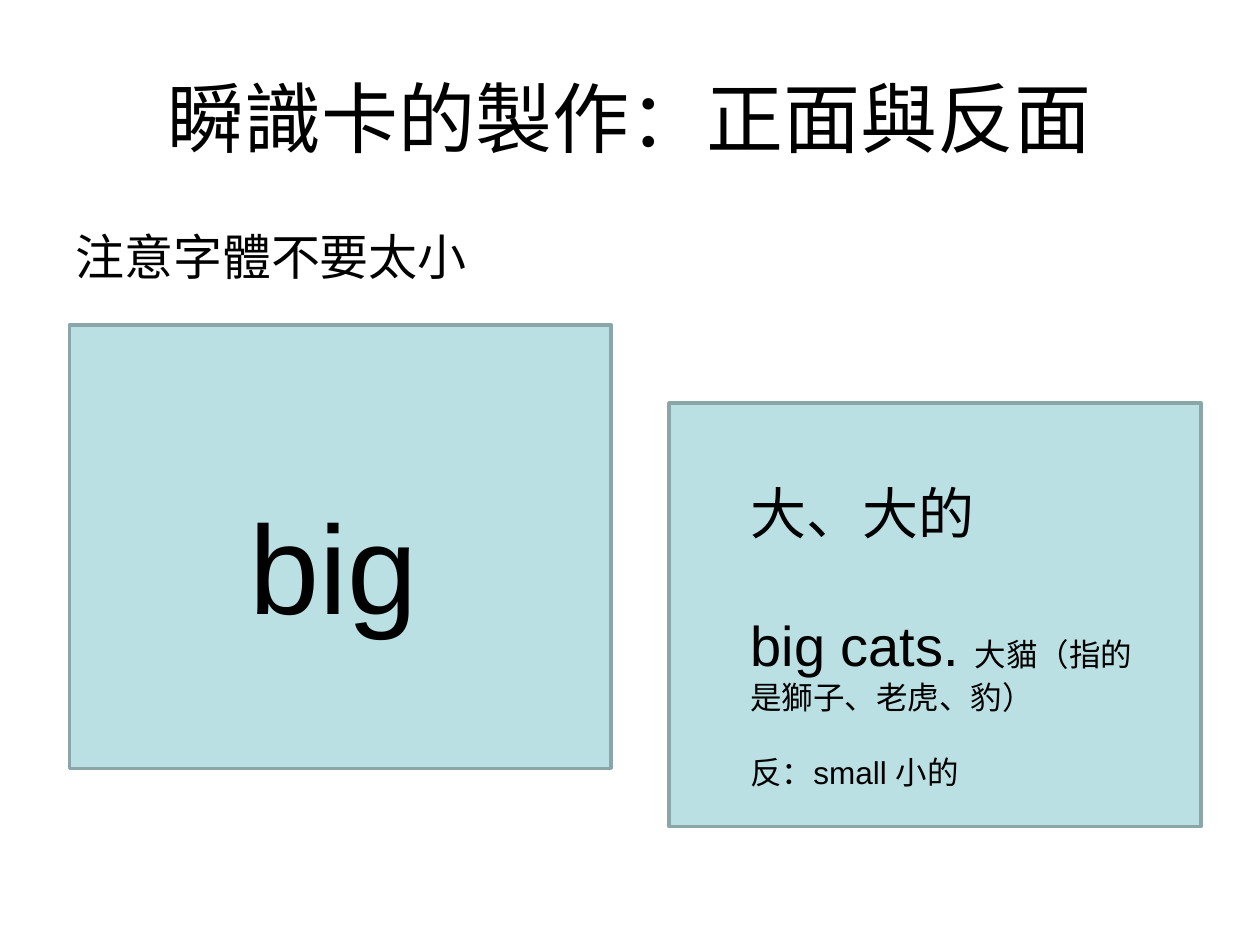
from pptx import Presentation
from pptx.dml.color import RGBColor
from pptx.enum.shapes import MSO_SHAPE
from pptx.enum.text import MSO_ANCHOR, PP_ALIGN
from pptx.util import Cm, Pt

BLACK = RGBColor(0x00, 0x00, 0x00)
CARD_FILL = RGBColor(0xBB, 0xE0, 0xE3)
CARD_LINE = RGBColor(0x8A, 0xA6, 0xA8)


def add_run(p, text, size):
    r = p.add_run()
    r.text = text
    font = {"name": "Arial", "size": Pt(size), "bold": False}
    for name, value in font.items():
        setattr(r.font, name, value)
    r.font.color.rgb = BLACK


def place(sp, left, top, width, height):
    box = {"left": left, "top": top, "width": width, "height": height}
    for name, value in box.items():
        setattr(sp, name, Cm(value))


def set_title(s, text, box):
    sp = s.shapes.title
    place(sp, *box)
    tf = sp.text_frame
    tf.vertical_anchor = MSO_ANCHOR.MIDDLE
    p = tf.paragraphs[0]
    p.alignment = PP_ALIGN.CENTER
    add_run(p, text, 44)


def add_card(s, box):
    sp = s.shapes.add_shape(MSO_SHAPE.RECTANGLE, *map(Cm, box))
    sp.shadow.inherit = False
    sp.fill.solid()
    sp.fill.fore_color.rgb = CARD_FILL
    sp.line.color.rgb = CARD_LINE
    sp.line.width = Pt(2)


def add_text(s, box, paragraphs):
    """Each paragraph is (space before in points, [(text, size), ...])."""
    tf = s.shapes.add_textbox(*map(Cm, box)).text_frame
    tf.word_wrap = True
    for i, (space, runs) in enumerate(paragraphs):
        p = tf.add_paragraph() if i else tf.paragraphs[0]
        p.space_before = Pt(space)
        for text, size in runs:
            add_run(p, text, size)


def main():
    prs = Presentation()
    prs.slide_width, prs.slide_height = Cm(25.4), Cm(19.05)
    s = prs.slides.add_slide(prs.slide_layouts[5])

    set_title(s, "瞬識卡的製作：正面與反面", (1.27, 0.76, 22.86, 3.18))
    add_text(s, (1.27, 4.45, 11.23, 12.57),
             [(5.6, [("注意字體不要太小", 28)])])

    add_card(s, (1.4, 6.55, 10.92, 8.94))
    add_text(s, (4.78, 9.73, 4.57, 3.33), [(0, [("big", 72)])])

    add_card(s, (13.49, 8.13, 10.72, 8.53))
    add_text(s, (14.88, 9.53, 8.53, 6.65), [
        (0, [("大、大的", 32)]),
        (37, [("big cats. ", 32), ("大貓（指的是獅子、老虎、豹）", 18)]),
        (21, [("反：small 小的", 18)]),
    ])

    prs.save("out.pptx")


if __name__ == "__main__":
    main()
